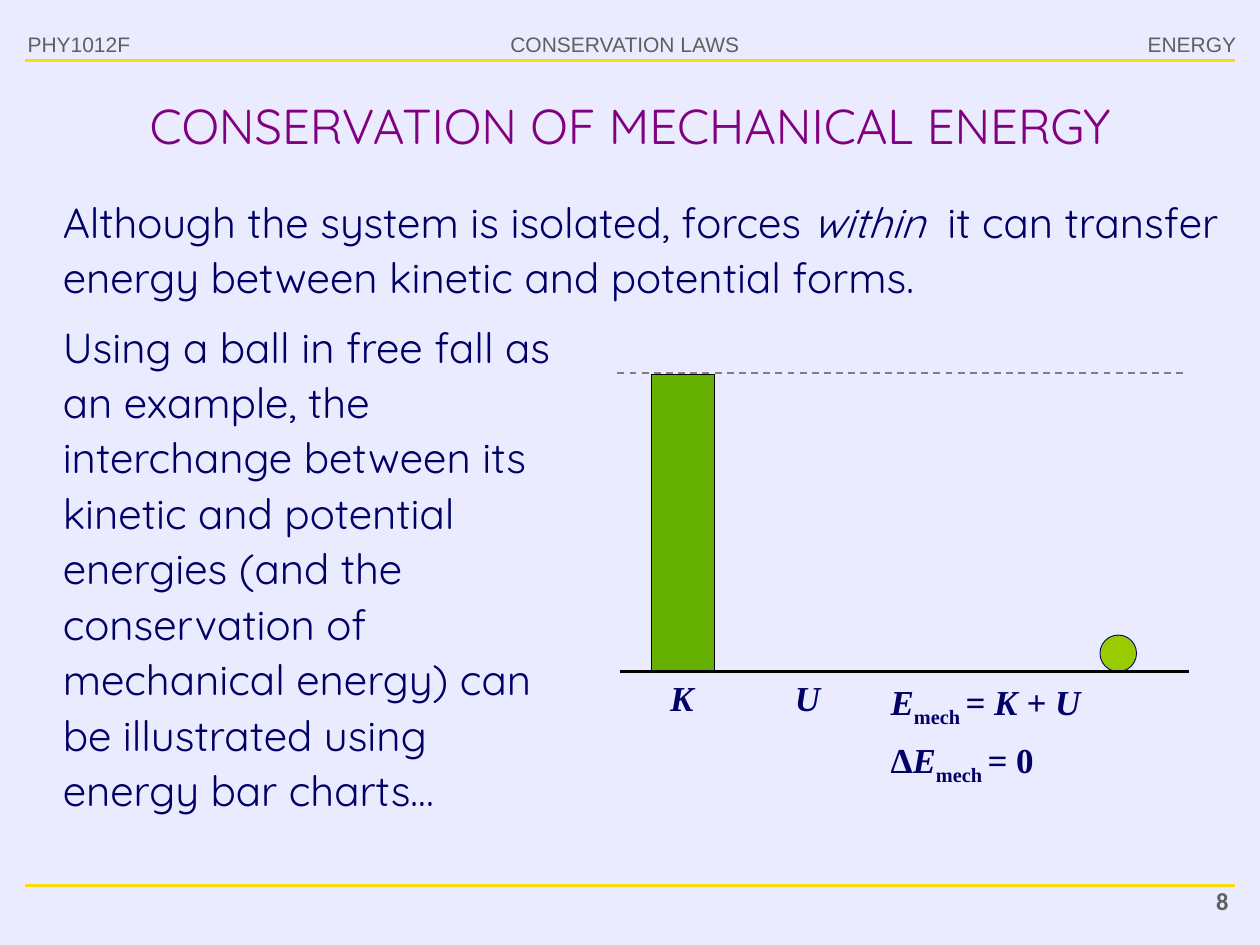
from dataclasses import dataclass

from lxml import etree
from pptx import Presentation
from pptx.dml.color import RGBColor
from pptx.enum.dml import MSO_LINE
from pptx.enum.shapes import MSO_CONNECTOR, MSO_SHAPE
from pptx.enum.text import MSO_ANCHOR, MSO_AUTO_SIZE, PP_ALIGN
from pptx.oxml.ns import qn
from pptx.util import Inches, Pt

LEFT, CENTER, RIGHT = PP_ALIGN.LEFT, PP_ALIGN.CENTER, PP_ALIGN.RIGHT
MIDDLE = MSO_ANCHOR.MIDDLE
NO_AUTOFIT = MSO_AUTO_SIZE.NONE
STRAIGHT = MSO_CONNECTOR.STRAIGHT
RECTANGLE, OVAL = MSO_SHAPE.RECTANGLE, MSO_SHAPE.OVAL
DASH = MSO_LINE.DASH


@dataclass(frozen=True)
class TextStyle:
    font: str
    size: float
    color: str
    bold: bool = False


@dataclass(frozen=True)
class Theme:
    background: str = "EBEBFF"
    rule: str = "F8DC0E"
    outline: str = "000000"
    guide: str = "808080"
    bar: str = "64AF00"
    ball: str = "99CC00"
    ball_outline: str = "000066"
    header: TextStyle = TextStyle("Arial", 12, "5F5F5F")
    number: TextStyle = TextStyle("Calibri", 14, "5F5F5F", True)
    title: TextStyle = TextStyle("Quicksand", 28, "800080")
    body: TextStyle = TextStyle("Quicksand", 24, "000066")
    formula: TextStyle = TextStyle("Times New Roman", 20, "000066", True)


THEME = Theme()


def rgb(color):
    return RGBColor.from_string(color)


def format_run(run, style, italic=False, subscript=False):
    font = run.font
    font.name, font.size, font.bold = style.font, Pt(style.size), style.bold
    font.italic = italic
    font.color.rgb = rgb(style.color)
    if subscript:
        run._r.get_or_add_rPr().set("baseline", "-25000")


def add_text(slide, box, parts, style, align=LEFT):
    """Add one paragraph; each part is (text, marks), marks 'i' or 's'."""
    frame = slide.shapes.add_textbox(*map(Inches, box)).text_frame
    frame.word_wrap = True
    paragraph = frame.paragraphs[0]
    paragraph.alignment = align
    for text, marks in parts:
        run = paragraph.add_run()
        run.text = text
        format_run(run, style, "i" in marks, "s" in marks)
    return paragraph


def add_indented(slide, box, parts, style, spacing):
    paragraph = add_text(slide, box, parts, style)
    paragraph.level = 1
    paragraph.line_spacing = spacing
    properties = paragraph._p.get_or_add_pPr()
    properties.set("marL", str(Inches(0.2)))
    properties.set("indent", "0")


def add_horizontal(slide, left, right, y, color, width, dash=None):
    line = slide.shapes.add_connector(
        STRAIGHT, Inches(left), Inches(y), Inches(right), Inches(y))
    line.line.color.rgb = rgb(color)
    line.line.width = Pt(width)
    if dash:
        line.line.dash_style = dash
    etree.SubElement(line._element.spPr, qn("a:effectLst"))


def add_figure(slide, kind, box, fill, outline, width):
    figure = slide.shapes.add_shape(kind, *map(Inches, box))
    figure.shadow.inherit = False
    figure.fill.solid()
    figure.fill.fore_color.rgb = rgb(fill)
    figure.line.color.rgb = rgb(outline)
    figure.line.width = Pt(width)


def add_title(slide, text):
    title = slide.shapes.title
    title.left, title.top = Inches(0.5), Inches(0.63)
    title.width, title.height = Inches(9), Inches(0.72)
    frame = title.text_frame
    frame.text = text
    frame.auto_size = NO_AUTOFIT
    frame.vertical_anchor = MIDDLE
    frame.paragraphs[0].alignment = CENTER
    format_run(frame.paragraphs[0].runs[0], THEME.title)


def add_page_frame(slide):
    for y in (0.48, 7.03):
        add_horizontal(slide, 0.2, 9.8, y, THEME.rule, 1.75)
    headers = (
        ("PHY1012F", 0.12, 1.18, LEFT),
        ("CONSERVATION LAWS", 3.81, 2.3, CENTER),
        ("ENERGY", 8.71, 1.2, RIGHT),
    )
    for text, left, width, align in headers:
        add_text(slide, (left, 0.2, width, 0.3), [(text, "")],
                 THEME.header, align)
    add_text(slide, (8.82, 6.98, 1.03, 0.37), [("8", "")], THEME.number, RIGHT)


def add_energy_diagram(slide):
    top, ground = 2.97, 5.33
    ball = 0.29
    add_figure(slide, OVAL, (8.73, ground - ball, ball, ball),
               THEME.ball, THEME.ball_outline, 0.5)
    add_figure(slide, RECTANGLE, (5.17, top, 0.5, ground - top),
               THEME.bar, THEME.outline, 0.75)
    add_horizontal(slide, 4.92, 9.44, ground, THEME.outline, 1.25)
    add_horizontal(slide, 4.9, 9.4, 2.96, THEME.guide, 1, DASH)

    # Bar labels and energy equations
    labels = (
        ((5.02, 5.36, 0.7, 0.4), [("K", "i")]),
        ((6.01, 5.36, 0.7, 0.4), [("U", "i")]),
        ((6.77, 5.36, 2, 0.4),
         [("E", "i"), ("mech ", "s"), ("= K + U", "i")]),
        ((6.77, 5.82, 1.67, 0.4),
         [("Δ", ""), ("E", "i"), ("mech ", "s"), ("= ", "i"), ("0", "")]),
    )
    for box, parts in labels:
        add_indented(slide, box, parts, THEME.formula, 0.9)


def main():
    deck = Presentation()
    deck.slide_width, deck.slide_height = Inches(10), Inches(7.5)
    slide = deck.slides.add_slide(deck.slide_layouts[5])
    slide.background.fill.solid()
    slide.background.fill.fore_color.rgb = rgb(THEME.background)

    # Header, footer and title
    add_page_frame(slide)
    add_title(slide, "CONSERVATION OF MECHANICAL ENERGY")

    # Explanation
    add_indented(slide, (0.2, 1.47, 9.6, 0.98), [
        ("Although the system is isolated, forces ", ""),
        ("within ", "i"),
        (" it can transfer energy between kinetic and potential forms.", ""),
    ], THEME.body, 1.1)
    add_indented(slide, (0.2, 2.46, 4.4, 4.05), [
        ("Using a ball in free fall as an example, the interchange between "
         "its kinetic and potential energies (and the conservation of "
         "mechanical energy) can be illustrated using energy bar charts…", ""),
    ], THEME.body, 1.1)

    # Energy bar chart
    add_energy_diagram(slide)
    deck.save("out.pptx")


if __name__ == "__main__":
    main()
